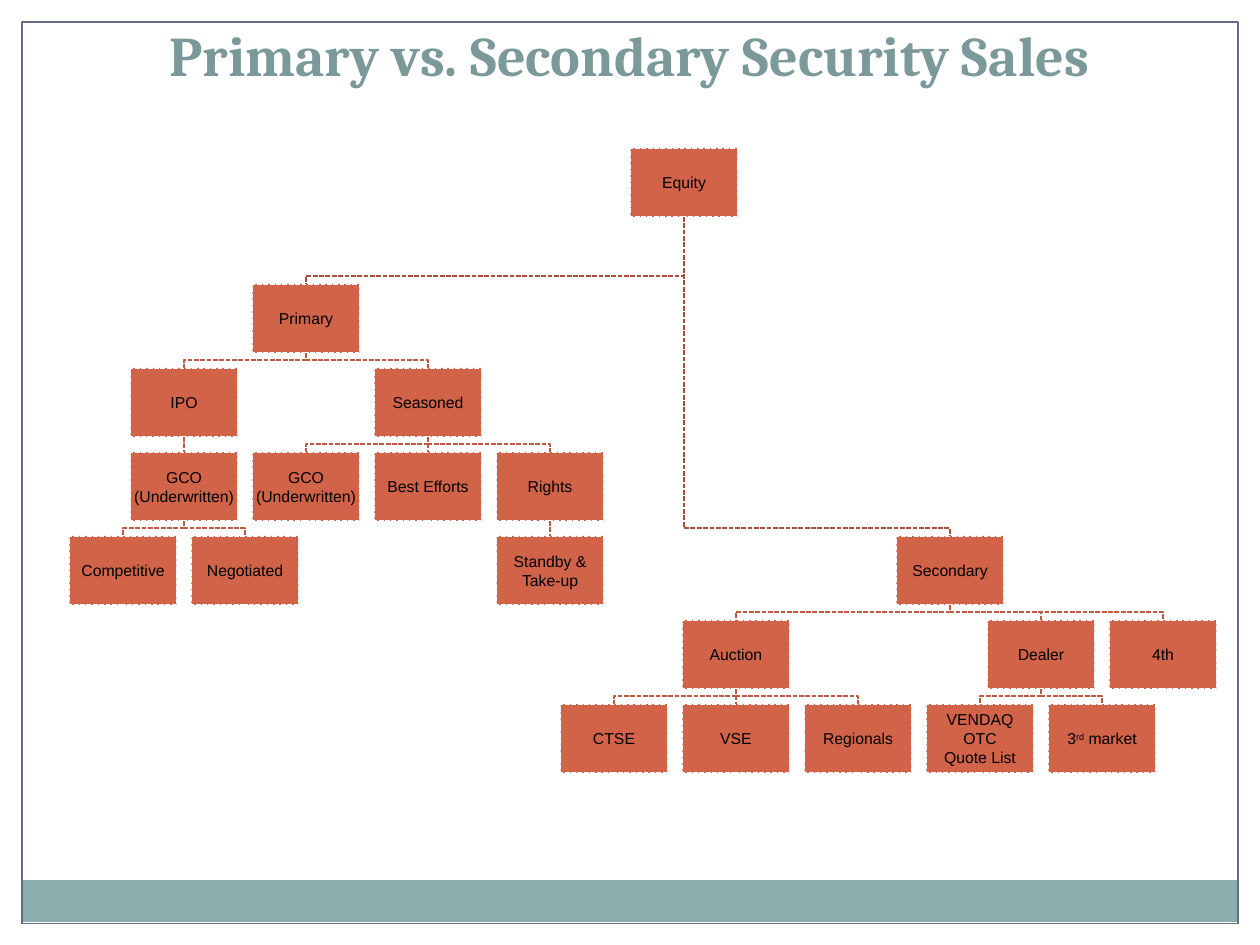
"""Build a slide that charts primary and secondary security sales as a tree."""
import pptx
import pptx.dml.color
import pptx.enum.dml
import pptx.enum.shapes
import pptx.enum.text
import pptx.oxml
import pptx.oxml.ns
import pptx.util

SCALE = 914400 / 126
BOX_WIDTH, BOX_HEIGHT = 107, 69
ROOT_TOP, FIRST_TOP, ROW_STEP = 148, 284, 84
BEND = 8
LEFT, RIGHT, HALF_STEP = 123, 614, 61
COLORS = {
    "title": "7C999A", "band": "8CADAE", "frame": "646B86", "white": "FFFFFF",
    "box": "D16349", "text": "000000", "root_line": "A74F3A", "line": "BE5A42",
}


def px(length):
    return pptx.util.Emu(round(length * SCALE))


def color(name):
    return pptx.dml.color.RGBColor.from_string(COLORS[name])


def left_column(step):
    return LEFT + step * HALF_STEP


def right_column(step):
    return RIGHT + step * HALF_STEP


def node(text, center, *children):
    return {"text": text, "center": center, "children": children}


def security_tree():
    primary = node(
        "Primary", left_column(3),
        node("IPO", left_column(1),
             node("GCO\n(Underwritten)", left_column(1),
                  node("Competitive", left_column(0)),
                  node("Negotiated", left_column(2)))),
        node("Seasoned", left_column(5),
             node("GCO\n(Underwritten)", left_column(3)),
             node("Best Efforts", left_column(5)),
             node("Rights", left_column(7),
                  node("Standby & Take-up", left_column(7)))))
    secondary = node(
        "Secondary", 950,
        node("Auction", right_column(2),
             node("CTSE", right_column(0)),
             node("VSE", right_column(2)),
             node("Regionals", right_column(4))),
        node("Dealer", right_column(7),
             node("VENDAQ\nOTC\nQuote List", right_column(6)),
             node("3^rd^ market", right_column(8))),
        node("4th", right_column(9)))
    return node("Equity", 684, primary, secondary)


def write_text(frame, text, font, size, fill, bold=False, inset=(1, 1), anchor="MIDDLE"):
    frame.word_wrap = True
    frame.auto_size = pptx.enum.text.MSO_AUTO_SIZE.NONE
    frame.margin_left = frame.margin_right = px(inset[0])
    frame.margin_top = frame.margin_bottom = px(inset[1])
    frame.vertical_anchor = pptx.enum.text.MSO_ANCHOR[anchor]
    para = frame.paragraphs[0]
    para.alignment = pptx.enum.text.PP_ALIGN.CENTER
    for row, line in enumerate(text.split("\n")):
        if row:
            para.add_line_break()
        for index, part in enumerate(line.split("^")):
            span = para.add_run()
            span.text = part
            span.font.name = font
            span.font.size = pptx.util.Pt(size)
            span.font.bold = bold
            span.font.color.rgb = color(fill)
            if index % 2:
                span.font._element.set("baseline", "30000")


def style_line(line, name, width, dashed=False):
    line.color.rgb = color(name)
    line.width = pptx.util.Pt(width)
    if dashed:
        line.dash_style = pptx.enum.dml.MSO_LINE.SQUARE_DOT


def add_rectangle(page, left, top, width, height, fill=None):
    box = page.shapes.add_shape(
        pptx.enum.shapes.MSO_SHAPE.RECTANGLE, px(left), px(top), px(width), px(height))
    box.shadow.inherit = False
    box.line.fill.background()
    if fill:
        box.fill.solid()
        box.fill.fore_color.rgb = color(fill)
    else:
        box.fill.background()
    return box


def add_straight_link(page, parent_box, child_box, line_color):
    link = page.shapes.add_connector(pptx.enum.shapes.MSO_CONNECTOR.STRAIGHT, 0, 0, 0, 0)
    link.begin_connect(parent_box, 2)
    link.end_connect(child_box, 0)
    link._element.spPr.append(pptx.oxml.parse_xml(
        f'<a:effectLst {pptx.oxml.ns.nsdecls("a")}/>'))
    style_line(link.line, line_color, 0.9, dashed=True)


def add_elbow_link(page, start, end, line_color):
    builder = page.shapes.build_freeform(*start, scale=SCALE)
    bend = end[1] - BEND
    builder.add_line_segments([(start[0], bend), (end[0], bend), end], close=False)
    link = builder.convert_to_shape()
    link.shadow.inherit = False
    link.fill.background()
    style_line(link.line, line_color, 0.9, dashed=True)


def add_branch(page, branch, level=0):
    top = FIRST_TOP + (level - 1) * ROW_STEP if level else ROOT_TOP
    center = branch["center"]
    box = add_rectangle(page, center - BOX_WIDTH / 2, top, BOX_WIDTH, BOX_HEIGHT, "box")
    style_line(box.line, "white", 0.9, dashed=True)
    write_text(box.text_frame, branch["text"], "Arial", 9, "text")
    line_color = "line" if level else "root_line"
    for child in branch["children"]:
        child_level = 4 if child["text"] == "Secondary" else level + 1
        child_box = add_branch(page, child, child_level)
        if child["center"] == center:
            add_straight_link(page, box, child_box, line_color)
        else:
            child_top = FIRST_TOP + (child_level - 1) * ROW_STEP
            add_elbow_link(page, (center, top + BOX_HEIGHT),
                           (child["center"], child_top), line_color)
    return box


def add_frame(page):
    add_rectangle(page, 21, 880, 1217, 42, "band")
    frame = add_rectangle(page, 22, 22, 1216, 902)
    style_line(frame.line, "frame", 0.75)
    for edge in ((0, 924, 1260, 21), (0, 0, 1260, 21), (0, 0, 21, 945), (1239, 0, 21, 945)):
        add_rectangle(page, *edge, "white")


def add_title(page, text):
    title = page.shapes.title
    title.left, title.top, title.width, title.height = px(0), px(0), px(1260), px(94)
    write_text(title.text_frame, text, "Cambria", 32, "title",
               bold=True, inset=(13, 6), anchor="BOTTOM")


def main():
    deck = pptx.Presentation()
    deck.slide_width, deck.slide_height = px(1260), px(945)
    page = deck.slides.add_slide(deck.slide_layouts[5])
    add_frame(page)
    add_branch(page, security_tree())
    add_title(page, "Primary vs. Secondary Security Sales")
    deck.save("out.pptx")


if __name__ == "__main__":
    main()
